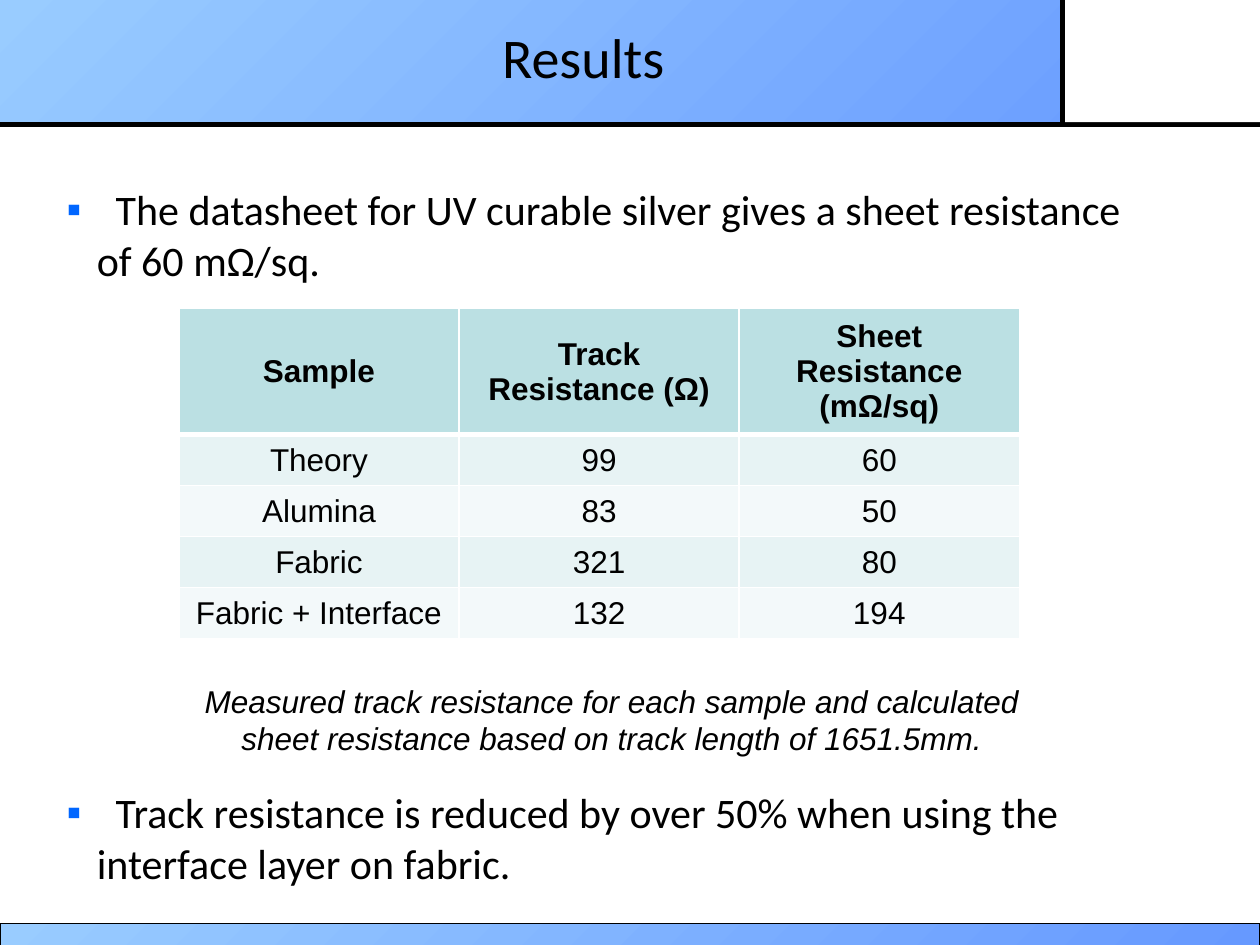
import pptx
import pptx.util
import pptx.dml.color
import pptx.enum.shapes
import pptx.enum.text
import pptx.oxml
import pptx.oxml.ns
from lxml import etree

Inches, Pt = pptx.util.Inches, pptx.util.Pt
RGBColor = pptx.dml.color.RGBColor
SHAPE = pptx.enum.shapes.MSO_SHAPE
ALIGN = pptx.enum.text.PP_ALIGN
ANCHOR = pptx.enum.text.MSO_ANCHOR
qn = pptx.oxml.ns.qn

BLACK = RGBColor(0x00, 0x00, 0x00)
WHITE = RGBColor(0xFF, 0xFF, 0xFF)
SKY = RGBColor(0x99, 0xCC, 0xFF)
BLUE = RGBColor(0x66, 0x99, 0xFF)
BULLET = RGBColor(0x00, 0x66, 0xFF)
HEAD_FILL = RGBColor(0xBB, 0xE0, 0xE3)
ROW_FILLS = RGBColor(0xE7, 0xF3, 0xF4), RGBColor(0xF3, 0xF9, 0xFA)

WIDTH, HEIGHT = 10, 7.5
HEADER_HEIGHT = 0.99
CORNER_LEFT = 8.43

TITLE_FONT = {"name": "Calibri", "size": Pt(32)}
BODY_FONT = {"name": "Calibri", "size": Pt(24)}
CELL_FONT = {"name": "Arial", "size": Pt(18)}
HEAD_FONT = {**CELL_FONT, "bold": True}
CAPTION_FONT = {**CELL_FONT, "italic": True}

POINTS = [
    "The datasheet for UV curable silver gives a sheet resistance of 60 mΩ/sq.",
    "Track resistance is reduced by over 50% when using the interface layer on fabric.",
]
RESULTS = [
    ("Sample", "Track Resistance (Ω)", "Sheet Resistance (mΩ/sq)"),
    ("Theory", "99", "60"),
    ("Alumina", "83", "50"),
    ("Fabric", "321", "80"),
    ("Fabric + Interface", "132", "194"),
]
CAPTION = [
    "Measured track resistance for each sample and calculated",
    "sheet resistance based on track length of 1651.5mm.",
]


def inches(box):
    return [Inches(length) for length in box]


def style(paragraph, font_values, align=ALIGN.CENTER):
    paragraph.alignment = align
    for name, value in font_values.items():
        setattr(paragraph.font, name, value)
    paragraph.font.color.rgb = BLACK


def add_text(slide, box, lines, font_values, wrap=True):
    frame = slide.shapes.add_textbox(*inches(box)).text_frame
    frame.word_wrap = wrap
    frame.text = "\n".join(lines)
    for paragraph in frame.paragraphs:
        style(paragraph, font_values)


def add_band(slide, box, outlined=False):
    band = slide.shapes.add_shape(SHAPE.RECTANGLE, *inches(box))
    band.shadow.inherit = False
    band.fill.gradient()
    band.fill.gradient_angle = 315
    for stop, color, position in zip(band.fill.gradient_stops, (SKY, BLUE), (0, 1)):
        stop.color.rgb = color
        stop.position = position
    if outlined:
        band.line.color.rgb = BLACK
        band.line.width = Pt(1)
    else:
        band.line.fill.background()


def add_rule(slide, *ends):
    rule = slide.shapes.add_connector(
        pptx.enum.shapes.MSO_CONNECTOR.STRAIGHT, *inches(ends))
    rule.line.color.rgb = BLACK
    rule.line.width = Pt(3)
    etree.SubElement(rule._element.spPr, qn("a:effectLst"))


def add_header(slide, width, height):
    add_band(slide, (0, 0, width, height))
    add_rule(slide, 0, height, width, height)
    corner = slide.shapes.add_shape(
        SHAPE.RECTANGLE, *inches((CORNER_LEFT, 0, width - CORNER_LEFT, height - 0.02)))
    corner.shadow.inherit = False
    corner.fill.solid()
    corner.fill.fore_color.rgb = WHITE
    corner.line.fill.background()
    add_rule(slide, CORNER_LEFT, height, CORNER_LEFT, 0)
    add_text(slide, (0.83, 0.13, CORNER_LEFT - 0.83, 0.63), ["Results"], TITLE_FONT)


def add_bullet(paragraph):
    """Hang a square bullet and set a tab stop for the first line."""
    properties = paragraph._p.get_or_add_pPr()
    properties.set("marL", str(Inches(0.24)))
    properties.set("indent", str(-Inches(0.24)))
    color = etree.SubElement(properties, qn("a:buClr"))
    etree.SubElement(color, qn("a:srgbClr"), val=str(BULLET))
    etree.SubElement(properties, qn("a:buFont"), typeface="Arial")
    etree.SubElement(properties, qn("a:buChar"), char="▪")
    tabs = etree.SubElement(properties, qn("a:tabLst"))
    etree.SubElement(tabs, qn("a:tab"), pos=str(Inches(0.39)), algn="l")


def add_points(slide, box, gap):
    """Place the bullets in one box, leaving a gap for the table between them."""
    frame = slide.shapes.add_textbox(*inches(box)).text_frame
    frame.word_wrap = True
    frame.text = "\n".join("\t" + point for point in POINTS)
    for index, paragraph in enumerate(frame.paragraphs):
        add_bullet(paragraph)
        style(paragraph, BODY_FONT, ALIGN.LEFT)
        if index:
            paragraph.space_before = gap


def add_borders(cell, widths):
    properties = cell._tc.get_or_add_tcPr()
    for index, (side, width) in enumerate(widths.items()):
        border = etree.Element(qn("a:" + side), w=str(Pt(width)))
        fill = etree.SubElement(border, qn("a:solidFill"))
        etree.SubElement(fill, qn("a:srgbClr"), val=str(WHITE))
        properties.insert(index, border)


def add_results(slide, box, head_height):
    rows, columns = len(RESULTS), len(RESULTS[0])
    table = slide.shapes.add_table(rows, columns, *inches(box)).table
    row_height = (box[3] - head_height) / (rows - 1)
    for r, values in enumerate(RESULTS):
        table.rows[r].height = Inches(row_height if r else head_height)
        for c, value in enumerate(values):
            cell = table.cell(r, c)
            cell.text = value
            cell.vertical_anchor = ANCHOR.MIDDLE
            style(cell.text_frame.paragraphs[0], CELL_FONT if r else HEAD_FONT)
            cell.fill.solid()
            cell.fill.fore_color.rgb = ROW_FILLS[(r - 1) % 2] if r else HEAD_FILL
            add_borders(cell, {"lnL": 1, "lnR": 1, "lnT": 3 if r == 1 else 1,
                               "lnB": 1 if r else 3})


def main():
    deck = pptx.Presentation()
    deck.slide_width, deck.slide_height = Inches(WIDTH), Inches(HEIGHT)
    slide = deck.slides.add_slide(deck.slide_layouts[6])
    add_header(slide, WIDTH, HEADER_HEIGHT)
    add_band(slide, (0, 7.33, WIDTH, 0.2), outlined=True)
    add_points(slide, (0.43, 1.41, 8.84, 5.69), gap=Pt(287))
    add_results(slide, (1.42, 2.45, 6.67, 2.62), head_height=1)
    add_text(slide, (1.46, 5.36, 6.79, 0.71), CAPTION, CAPTION_FONT, wrap=False)
    deck.save("out.pptx")


if __name__ == "__main__":
    main()
